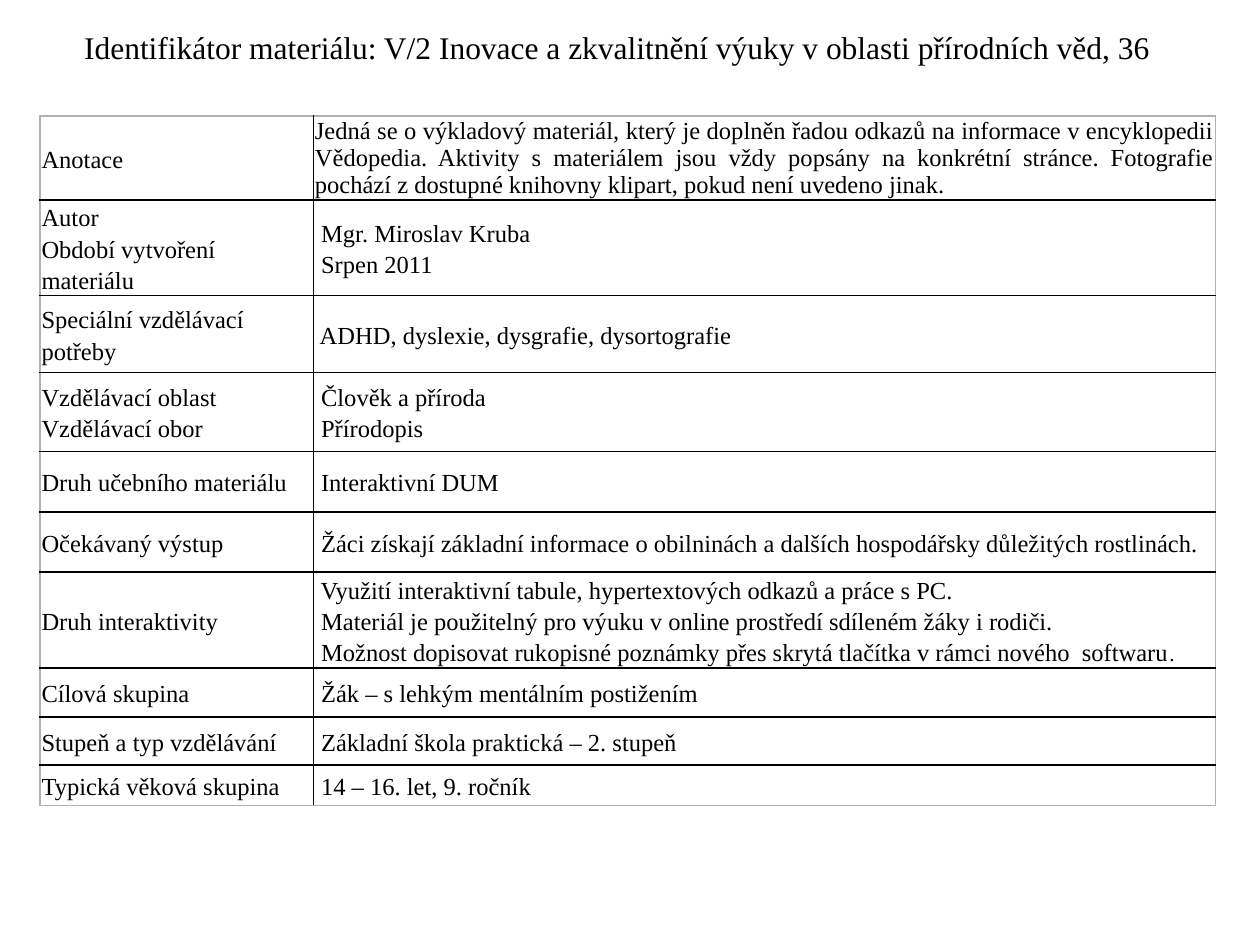
from pptx import Presentation
from pptx.dml.color import RGBColor
from pptx.enum.text import MSO_ANCHOR, MSO_AUTO_SIZE, PP_ALIGN
from pptx.oxml.ns import qn
from pptx.util import Pt
from lxml.etree import SubElement

BLACK = RGBColor(0, 0, 0)
GREY = RGBColor(0xB2, 0xB2, 0xB2)

# Row height in points, label lines, value lines
ROWS = [
    (21, ["Anotace"],
     ["Jedná se o výkladový materiál, který je doplněn řadou odkazů na informace "
      "v encyklopedii Vědopedia. Aktivity s materiálem jsou vždy popsány na konkrétní "
      "stránce. Fotografie pochází z dostupné knihovny klipart, pokud není uvedeno jinak."]),
    (47, ["Autor", "Období vytvoření materiálu"], [" Mgr. Miroslav Kruba", " Srpen 2011"]),
    (44, ["Speciální vzdělávací potřeby"], [" ADHD, dyslexie, dysgrafie, dysortografie"]),
    (45, ["Vzdělávací oblast", "Vzdělávací obor"], [" Člověk a příroda", " Přírodopis"]),
    (34.5, ["Druh učebního materiálu"], [" Interaktivní DUM"]),
    (34.5, ["Očekávaný výstup"],
     [" Žáci získají základní informace o obilninách a dalších hospodářsky důležitých rostlinách."]),
    (32, ["Druh interaktivity"],
     [" Využití interaktivní tabule, hypertextových odkazů a práce s PC.",
      " Materiál je použitelný pro výuku v online prostředí sdíleném žáky i rodiči.",
      " Možnost dopisovat rukopisné poznámky přes skrytá tlačítka v rámci nového  softwaru"]),
    (28, ["Cílová skupina"], [" Žák – s lehkým mentálním postižením"]),
    (27.5, ["Stupeň a typ vzdělávání"], [" Základní škola praktická – 2. stupeň"]),
    (23, ["Typická věková skupina"], [" 14 – 16. let, 9. ročník"]),
]
COLUMN_WIDTHS = [156.25, 515.5]
CELL_FORMAT = {"margin_left": Pt(0.75), "margin_right": Pt(0.75), "margin_top": Pt(0.75),
               "margin_bottom": Pt(0.75), "vertical_anchor": MSO_ANCHOR.MIDDLE}


def add_span(para, text, size):
    span = para.add_run()
    span.text = text
    for name, value in {"name": "Times New Roman", "size": Pt(size)}.items():
        setattr(span.font, name, value)
    span.font.color.rgb = BLACK


def add_borders(cell, outer_sides):
    """Draw all four sides, grey on the table's edge and black inside."""
    properties = cell._tc.get_or_add_tcPr()
    for position, side in enumerate(["lnL", "lnR", "lnT", "lnB"]):
        line = properties.makeelement(qn(f"a:{side}"), {"w": str(Pt(1))})
        properties.insert(position, line)
        fill = SubElement(line, qn("a:solidFill"))
        color = GREY if side in outer_sides else BLACK
        SubElement(fill, qn("a:srgbClr"), val=str(color))


deck = Presentation()
deck.slide_width, deck.slide_height = Pt(720), Pt(540)
page = deck.slides.add_slide(deck.slide_layouts[6])

frame = page.shapes.add_table(len(ROWS), 2, Pt(23), Pt(66.25), Pt(sum(COLUMN_WIDTHS)),
                              Pt(sum(row[0] for row in ROWS)))
table = frame.table
table.first_row = table.horz_banding = False
for column, width in zip(table.columns, COLUMN_WIDTHS):
    column.width = Pt(width)

for row_number, (height, *contents) in enumerate(ROWS):
    table.rows[row_number].height = Pt(height)
    for column_number, lines in enumerate(contents):
        cell = table.cell(row_number, column_number)
        for name, value in CELL_FORMAT.items():
            setattr(cell, name, value)
        cell.fill.background()
        outer_sides = {"lnR" if column_number else "lnL"}
        if row_number == 0:
            outer_sides.add("lnT")
        if row_number == len(ROWS) - 1:
            outer_sides.add("lnB")
        add_borders(cell, outer_sides)
        for number, line in enumerate(lines):
            para = cell.text_frame.add_paragraph() if number else cell.text_frame.paragraphs[0]
            para.line_spacing = 1.15
            add_span(para, line, 14)

annotation = table.cell(0, 1).text_frame.paragraphs[0]
annotation.alignment = PP_ALIGN.JUSTIFY
annotation.line_spacing = 1.0
add_span(table.cell(6, 1).text_frame.paragraphs[-1], ".", 12)

title = page.shapes.add_textbox(Pt(41), Pt(12.25), Pt(652.5), Pt(29))
title.text_frame.word_wrap = True
title.text_frame.auto_size = MSO_AUTO_SIZE.SHAPE_TO_FIT_TEXT
add_span(title.text_frame.paragraphs[0],
         "Identifikátor materiálu: V/2 Inovace a zkvalitnění výuky v oblasti přírodních věd, 36", 18)

deck.save("out.pptx")
